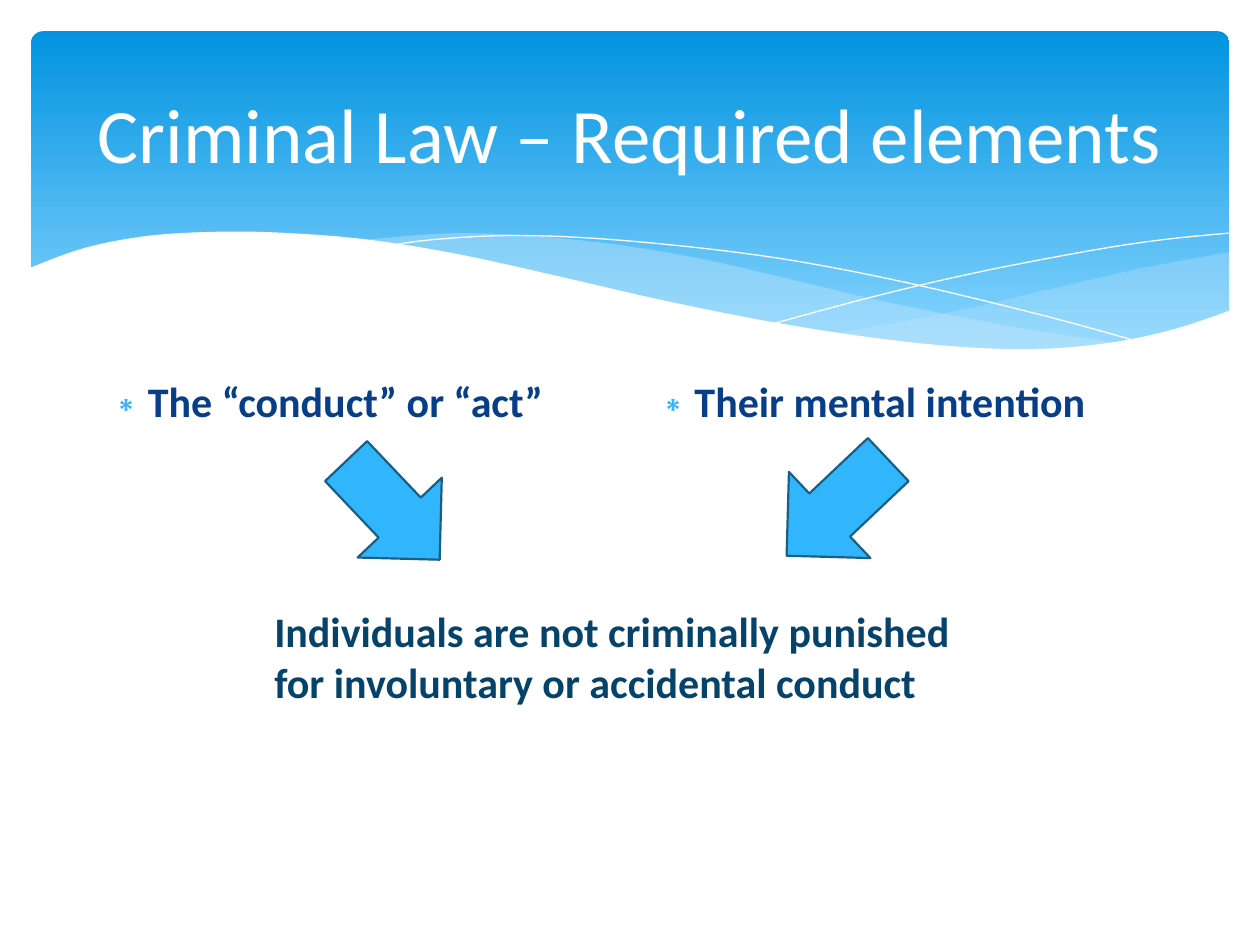
from lxml.etree import SubElement
from pptx import Presentation
from pptx.dml.color import RGBColor
from pptx.enum.shapes import MSO_SHAPE as Preset
from pptx.enum.text import MSO_ANCHOR as Anchor, MSO_AUTO_SIZE as AutoSize, PP_ALIGN as Align
from pptx.oxml.ns import qn
from pptx.util import Cm, Pt

FONT = "Calibri"
SKY = "31B6FD"
PALE = "C6E7FC"
WHITE = "FFFFFF"

RIGHT_WAVE_TOP = [(24.79, 5.08), (23.01, 5.41), (21.13, 5.84), (19.13, 6.3), (16.79, 6.73)]
RIGHT_WAVE_BOTTOM = [(16.79, 6.73), (18.26, 6.91), (19.53, 7.02), (20.93, 7.04),
                     (22.38, 6.93), (23.75, 6.65), (24.79, 6.27)]
MIDDLE_WAVE_TOP = [(22.68, 6.93), (20.5, 6.6), (17.93, 6.1), (15.98, 5.64), (14.1, 5.21),
                   (12.42, 4.93), (10.67, 4.75), (9.17, 4.7), (7.95, 4.78), (7.26, 4.85)]
MIDDLE_WAVE_BOTTOM = [(7.26, 4.85), (9.19, 5.16), (11.4, 5.64), (13.46, 6.1), (15.7, 6.55),
                      (17.65, 6.86), (19.33, 7.04), (20.78, 7.06), (22.68, 6.93)]
FALLING_LINE = [(7.85, 4.95), (8.74, 4.83), (10.19, 4.75), (11.91, 4.8), (14.12, 5),
                (16.15, 5.28), (18.47, 5.74), (21.11, 6.38), (23.04, 6.91)]
RISING_LINE = [(15.57, 6.53), (17.65, 5.97), (19.71, 5.49), (22, 5.05), (23.47, 4.83), (24.77, 4.7)]
FRONT_WAVE_TOP = [(24.82, 6.25), (23.62, 6.65), (22.23, 6.93), (20.55, 7.04), (18.44, 6.91),
                  (15.9, 6.55), (13.44, 6.07), (11.35, 5.59), (9.27, 5.13), (7.42, 4.83),
                  (5.84, 4.7), (4.5, 4.67), (3.02, 4.75), (1.7, 5), (0.58, 5.41)]
FRONT_WAVE_CORNERS = [(0.58, 8.36), (24.82, 8.36)]


def color(value):
    """Return the colour for a hex string."""
    return RGBColor.from_string(value)


def smooth(knots, steps=5):
    """Return points on a Catmull-Rom curve through the knots."""
    padded = [knots[0], *knots, knots[-1]]
    points = [knots[0]]
    for a, b, c, d in zip(padded, padded[1:], padded[2:], padded[3:]):
        for step in range(1, steps + 1):
            t = step / steps
            points.append(tuple(
                0.5 * (2 * q + (r - p) * t + (2 * p - 5 * q + 4 * r - s) * t ** 2
                       + (3 * q - p - 3 * r + s) * t ** 3)
                for p, q, r, s in zip(a, b, c, d)))
    return points


def place(shape, left, top, width, height):
    """Set position and size in centimetres."""
    shape.left, shape.top, shape.width, shape.height = map(Cm, (left, top, width, height))


def add_outline(slide, points, closed):
    """Add a freeform through points given in centimetres."""
    start, *others = [(Cm(x), Cm(y)) for x, y in points]
    builder = slide.shapes.build_freeform(*start)
    builder.add_line_segments(others, close=closed)
    shape = builder.convert_to_shape()
    shape.shadow.inherit = False
    return shape


def add_wave(slide, points, fill, opacity=100):
    """Add a filled wave without outline."""
    shape = add_outline(slide, points, True)
    shape.fill.solid()
    shape.fill.fore_color.rgb = color(fill)
    shape.line.fill.background()
    if opacity < 100:
        fill_color = shape.element.spPr.find(qn("a:solidFill"))[0]
        SubElement(fill_color, qn("a:alpha"), val=str(opacity * 1000))


def add_hairline(slide, knots):
    """Add a thin white curve."""
    shape = add_outline(slide, smooth(knots), False)
    shape.fill.background()
    shape.line.color.rgb = color(WHITE)
    shape.line.width = Pt(0)


def add_banner(slide):
    """Add the rounded gradient panel behind the title."""
    banner = slide.shapes.add_shape(Preset.ROUNDED_RECTANGLE, Cm(0.63), Cm(0.63), Cm(24.15), Cm(6.86))
    banner.adjustments[0] = 0.034
    banner.shadow.inherit = False
    banner.line.fill.background()
    banner.fill.gradient()
    banner.fill.gradient_angle = 270
    for stop, (position, value) in zip(banner.fill.gradient_stops, [(0, "0293E0"), (0.9, "83D3FE")]):
        stop.position = position
        stop.color.rgb = color(value)


def add_run(paragraph, text, size, value, bold=False):
    """Add one formatted run to a paragraph."""
    run = paragraph.add_run()
    run.text = text
    run.font.name = FONT
    run.font.size = Pt(size)
    run.font.bold = bold
    run.font.color.rgb = color(value)


def raise_to_front(shape):
    """Move a shape to the end of the drawing order."""
    shape.element.getparent().append(shape.element)


def fill_title(title, text):
    """Place and write the title."""
    raise_to_front(title)
    place(title, 1.27, 0.94, 22.86, 3.48)
    frame = title.text_frame
    frame.vertical_anchor = Anchor.MIDDLE
    frame.auto_size = AutoSize.NONE
    frame.paragraphs[0].alignment = Align.CENTER
    add_run(frame.paragraphs[0], text, 44, WHITE)


def fill_bullet(body, text, left, height):
    """Place a body placeholder and write its bulleted line."""
    raise_to_front(body)
    place(body, left, 7.44, 10.62, height)
    frame = body.text_frame
    frame.vertical_anchor = Anchor.TOP
    frame.auto_size = AutoSize.NONE
    paragraph = frame.paragraphs[0]
    properties = paragraph._p.get_or_add_pPr()
    properties.set("marL", str(Cm(0.76)))
    properties.set("indent", str(Cm(-0.76)))
    bullet_color = SubElement(properties, qn("a:buClr"))
    SubElement(bullet_color, qn("a:srgbClr"), val=SKY)
    SubElement(properties, qn("a:buChar"), char="∗")
    paragraph.space_before = Pt(0)
    add_run(paragraph, text, 24, "073E87", bold=True)


def add_conclusion(slide, text):
    """Add the statement that both arrows lead to."""
    box = slide.shapes.add_textbox(Cm(5.28), Cm(12.09), Cm(15.24), Cm(2.31))
    box.text_frame.word_wrap = True
    box.text_frame.auto_size = AutoSize.SHAPE_TO_FIT_TEXT
    add_run(box.text_frame.paragraphs[0], text, 24, "06436B", bold=True)


def add_block_arrow(slide, left, top, width, height, rotation):
    """Add a rotated block arrow."""
    arrow = slide.shapes.add_shape(Preset.RIGHT_ARROW, Cm(left), Cm(top), Cm(width), Cm(height))
    arrow.rotation = rotation
    arrow.shadow.inherit = False
    arrow.fill.solid()
    arrow.fill.fore_color.rgb = color(SKY)
    arrow.line.color.rgb = color("195F84")
    arrow.line.width = Pt(1.25)


def main():
    """Build and save the slide."""
    presentation = Presentation()
    presentation.slide_width, presentation.slide_height = Cm(25.4), Cm(19.05)
    slide = presentation.slides.add_slide(presentation.slide_layouts.get_by_name("Two Content"))
    title, conduct, intention = slide.placeholders

    add_banner(slide)
    add_wave(slide, smooth(RIGHT_WAVE_TOP) + smooth(RIGHT_WAVE_BOTTOM), PALE, 29)
    add_wave(slide, smooth(MIDDLE_WAVE_TOP) + smooth(MIDDLE_WAVE_BOTTOM), PALE, 40)
    add_hairline(slide, FALLING_LINE)
    add_hairline(slide, RISING_LINE)
    add_wave(slide, smooth(FRONT_WAVE_TOP) + FRONT_WAVE_CORNERS, WHITE)

    fill_title(title, "Criminal Law – Required elements")
    fill_bullet(conduct, "The “conduct” or “act”", 1.88, 2.92)
    fill_bullet(intention, "Their mental intention", 12.9, 2.29)
    add_conclusion(slide, "Individuals are not criminally punished for involuntary or accidental conduct")
    add_block_arrow(slide, 6.55, 9.12, 2.74, 2.34, 46.5)
    add_block_arrow(slide, 15.47, 9.04, 2.82, 2.39, 136.6)
    presentation.save("out.pptx")


if __name__ == "__main__":
    main()
